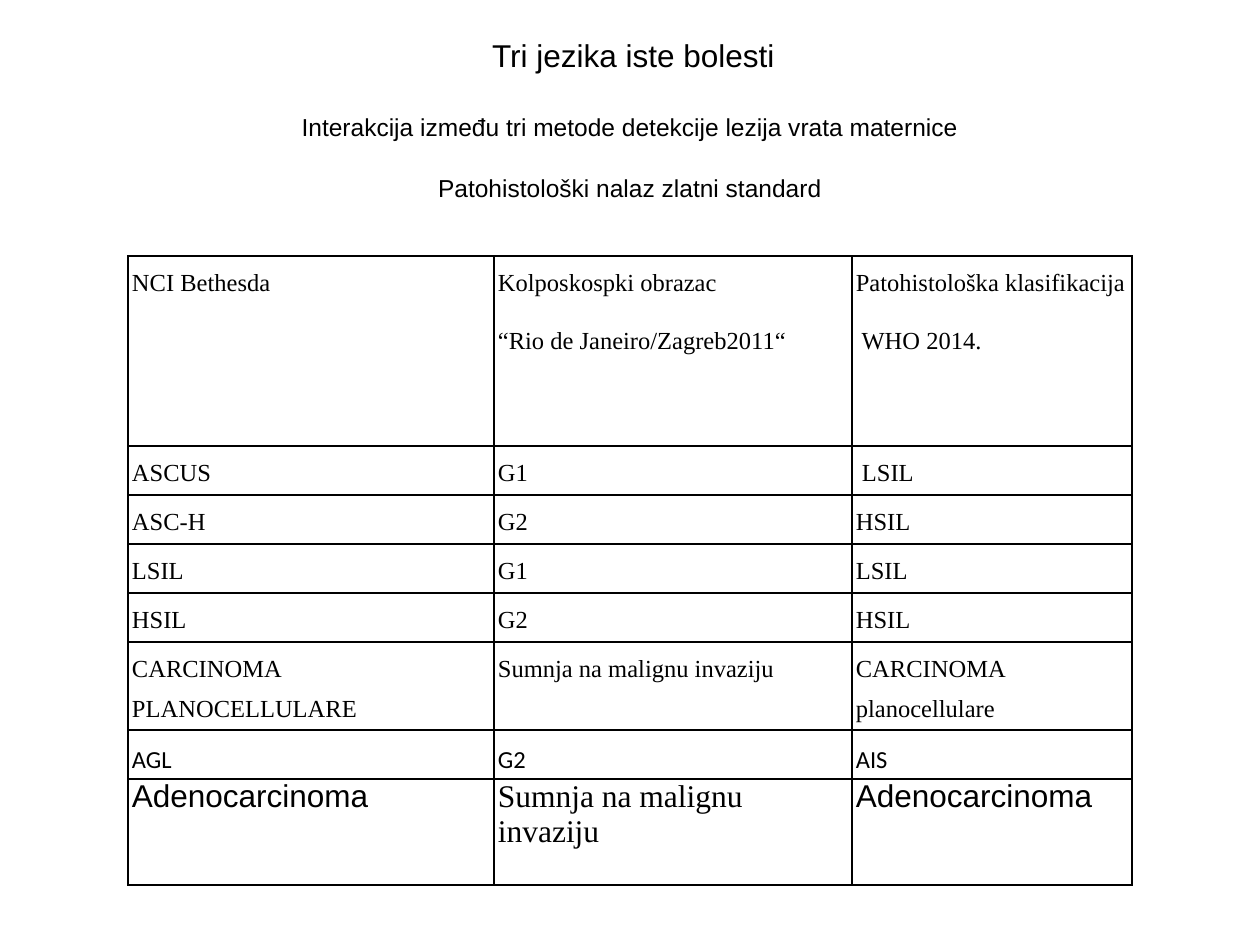
from lxml import etree
from pptx import Presentation
from pptx import util as u
from pptx.dml.color import RGBColor
from pptx.enum import text
from pptx.oxml import ns

PX = u.Inches(1) // 126
COLORS = {"ink": "000000", "paper": "FFFFFF"}
SERIF, SANS, LABEL = "Times New Roman", "Arial", "Calibri"

COLUMNS = [366, 358, 280]
ROWS = [190, 49, 49, 49, 49, 81, 49, 106]
CELLS = [
    ["NCI Bethesda", "Kolposkospki obrazac\n“Rio de Janeiro/Zagreb2011“",
     "Patohistološka klasifikacija\n WHO 2014."],
    ["ASCUS", "G1", " LSIL"],
    ["ASC-H", "G2", "HSIL"],
    ["LSIL", "G1", "LSIL"],
    ["HSIL", "G2", "HSIL"],
    ["CARCINOMA PLANOCELLULARE", "Sumnja na malignu invaziju",
     "CARCINOMA planocellulare"],
    ["AGL", "G2", "AIS"],
    ["Adenocarcinoma", "Sumnja na malignu invaziju", "Adenocarcinoma"],
]
LAST = len(CELLS) - 1


def format_para(para, font, size, align):
    para.alignment = align
    for span in para.runs:
        span.font.name = font
        span.font.size = u.Pt(size)
        span.font.color.rgb = RGBColor.from_string(COLORS["ink"])


def add_heading(page, box, lines, size, align, gap=0):
    """Put one paragraph per line in a text box, with gap points between them."""
    frame = page.shapes.add_textbox(*(n * PX for n in box)).text_frame
    frame.word_wrap = True
    frame.vertical_anchor = text.MSO_ANCHOR.MIDDLE
    frame.text = "\n".join(lines)
    for index, para in enumerate(frame.paragraphs):
        format_para(para, SANS, size, align)
        if index:
            para.space_before = u.Pt(gap)


def outline_cell(cell):
    """Draw a 1 pt line on all four sides; the lines must precede the fill."""
    properties = cell._tc.get_or_add_tcPr()
    for index, side in enumerate(("lnL", "lnR", "lnT", "lnB")):
        line = etree.Element(ns.qn(f"a:{side}"), w=str(u.Pt(1)))
        fill = etree.SubElement(line, ns.qn("a:solidFill"))
        etree.SubElement(fill, ns.qn("a:srgbClr"), val=COLORS["ink"])
        properties.insert(index, line)


def cell_font(row, column):
    if row == LAST:
        return SERIF if column == 1 else SANS
    return LABEL if row == LAST - 1 else SERIF


def fill_cell(cell, row, column):
    cell.fill.solid()
    cell.fill.fore_color.rgb = RGBColor.from_string(COLORS["paper"])
    outline_cell(cell)
    cell.margin_left = cell.margin_right = 4 * PX
    cell.margin_top = cell.margin_bottom = 0
    cell.text_frame.text = CELLS[row][column]
    for para in cell.text_frame.paragraphs:
        if row == LAST:
            format_para(para, cell_font(row, column), 18, text.PP_ALIGN.LEFT)
        else:
            format_para(para, cell_font(row, column), 14, text.PP_ALIGN.JUSTIFY)
            para.line_spacing = 1.5
            para.space_after = u.Pt(10)


def add_classification_table(page, left, top):
    table = page.shapes.add_table(
        len(ROWS), len(COLUMNS), left * PX, top * PX,
        sum(COLUMNS) * PX, sum(ROWS) * PX).table
    table.first_row = table.horz_banding = False
    for column, width in zip(table.columns, COLUMNS):
        column.width = width * PX
    for row, height in zip(table.rows, ROWS):
        row.height = height * PX
    for row in range(len(ROWS)):
        for column in range(len(COLUMNS)):
            fill_cell(table.cell(row, column), row, column)


def main():
    deck = Presentation()
    deck.slide_width, deck.slide_height = u.Inches(10), u.Inches(7.5)
    page = deck.slides.add_slide(deck.slide_layouts[6])
    add_heading(page, (63, 78, 1134, 158),
                ["Interakcija između tri metode detekcije lezija vrata maternice",
                 "Patohistološki nalaz zlatni standard"],
                14, text.PP_ALIGN.CENTER, gap=18)
    add_classification_table(page, 128, 256)
    add_heading(page, (462, 30, 325, 50), ["Tri jezika iste bolesti"],
                18, text.PP_ALIGN.RIGHT)
    deck.save("out.pptx")


if __name__ == "__main__":
    main()
